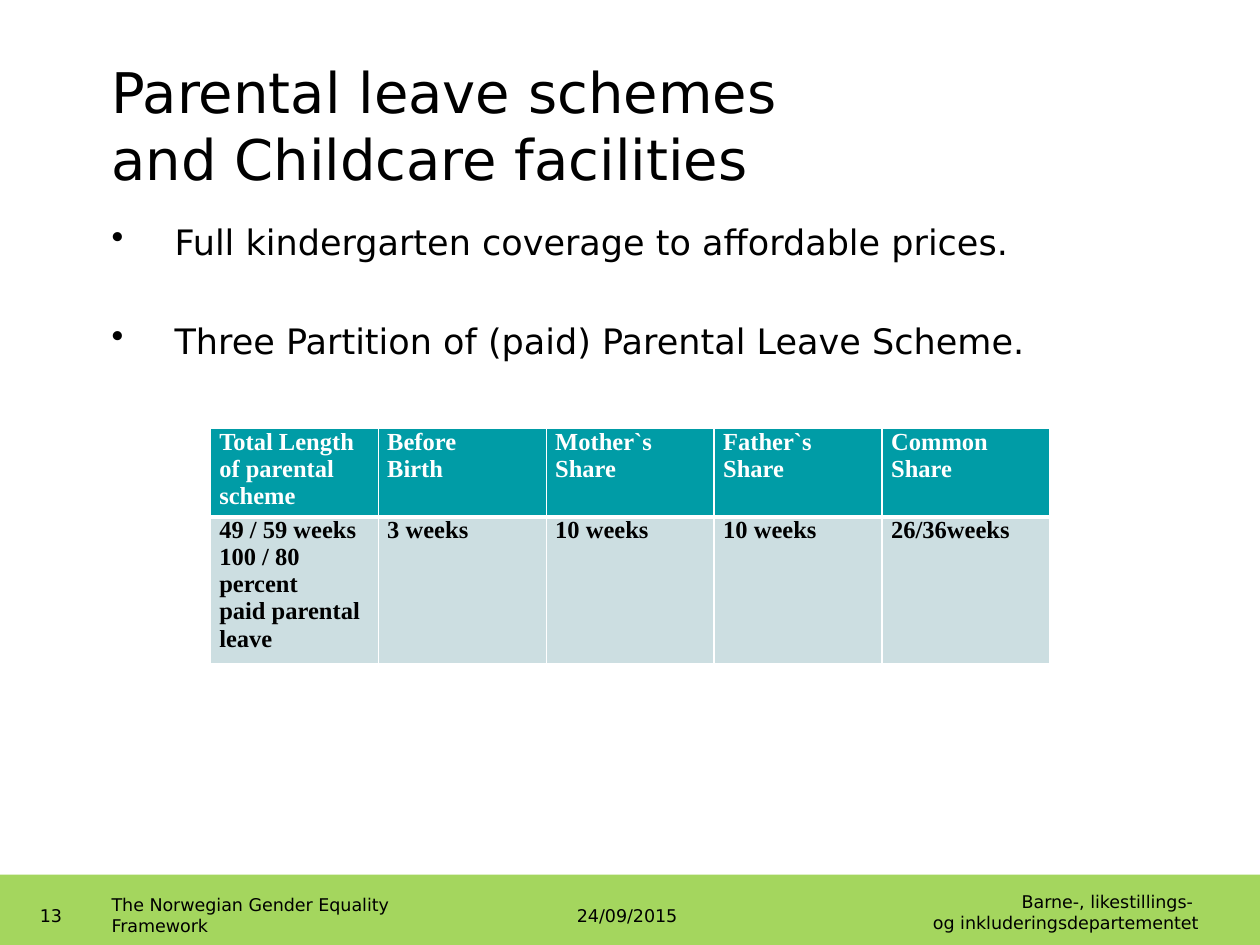
from lxml.etree import SubElement
from pptx import Presentation
from pptx.dml.color import RGBColor
from pptx.enum.shapes import MSO_SHAPE
from pptx.enum.text import MSO_ANCHOR, PP_ALIGN
from pptx.oxml.ns import qn
from pptx.util import Cm, Pt

SANS, SERIF = "DejaVu Sans", "Times New Roman"
BLACK, WHITE = "000000", "FFFFFF"
GREEN, TEAL, PALE_TEAL = "A4D65E", "009CA6", "CCDEE1"

BULLETS = [
    "Full kindergarten coverage to affordable prices.",
    "Three Partition of (paid) Parental Leave Scheme.",
]
LEAVE_SHARES = [
    ["Total Length of parental scheme", "Before\nBirth", "Mother`s\nShare",
     "Father`s\nShare", "Common\nShare"],
    ["49 / 59 weeks\n100 / 80 percent\npaid parental leave", "3 weeks",
     "10 weeks", "10 weeks", "26/36weeks"],
]


def color(hex_code):
    return RGBColor.from_string(hex_code)


def style(paragraph, size, font=SANS, hex_code=BLACK, bold=False):
    paragraph.font.size = Pt(size)
    paragraph.font.name = font
    paragraph.font.bold = bold
    paragraph.font.color.rgb = color(hex_code)


def add_text(slide, left, top, width, height, text, size,
             anchor=MSO_ANCHOR.MIDDLE, align=PP_ALIGN.LEFT):
    frame = slide.shapes.add_textbox(
        Cm(left), Cm(top), Cm(width), Cm(height)).text_frame
    frame.word_wrap = True
    frame.vertical_anchor = anchor
    frame.text = text
    for paragraph in frame.paragraphs:
        paragraph.alignment = align
        style(paragraph, size)
    return frame


def add_bullets(slide, left, top, width, height):
    frame = add_text(slide, left, top, width, height, "\n".join(BULLETS), 20,
                     anchor=MSO_ANCHOR.TOP)
    for index, paragraph in enumerate(frame.paragraphs):
        if index:
            paragraph.space_before = Pt(32.6)
        properties = paragraph._p.get_or_add_pPr()
        properties.set("marL", str(Cm(1.27)))
        properties.set("indent", str(-Cm(1.27)))
        bullet = properties.makeelement(qn("a:buChar"), {"char": "•"})
        properties.find(qn("a:defRPr")).addprevious(bullet)


def add_borders(cell, widths):
    """Draw white borders; widths are points for left, right, top, bottom."""
    properties = cell._tc.get_or_add_tcPr()
    for side, width in zip("LRTB", widths):
        line = SubElement(properties, qn(f"a:ln{side}"), w=str(Pt(width)))
        fill = SubElement(line, qn("a:solidFill"))
        SubElement(fill, qn("a:srgbClr"), val=WHITE)


def add_leave_table(slide, left, top, width, row_heights):
    column_count = len(LEAVE_SHARES[0])
    table = slide.shapes.add_table(
        len(LEAVE_SHARES), column_count, Cm(left), Cm(top),
        Cm(width), Cm(sum(row_heights))).table
    for column in table.columns:
        column.width = Cm(width / column_count)
    looks = [(TEAL, WHITE, (1, 1, 1, 3)), (PALE_TEAL, BLACK, (1, 1, 3, 1))]
    for row, height, texts, look in zip(table.rows, row_heights,
                                        LEAVE_SHARES, looks):
        row.height = Cm(height)
        fill, text_color, border_widths = look
        for cell, text in zip(row.cells, texts):
            add_borders(cell, border_widths)
            cell.fill.solid()
            cell.fill.fore_color.rgb = color(fill)
            cell.margin_left = cell.margin_right = Cm(0.18)
            cell.margin_top = cell.margin_bottom = 0
            cell.text = text
            for paragraph in cell.text_frame.paragraphs:
                style(paragraph, 14, SERIF, text_color, bold=True)


def add_footer(slide, left, top, width, height):
    band = slide.shapes.add_shape(
        MSO_SHAPE.RECTANGLE, Cm(left), Cm(top), Cm(width), Cm(height))
    band.shadow.inherit = False
    band.fill.solid()
    band.fill.fore_color.rgb = color(GREEN)
    band.line.fill.background()

    add_text(slide, left + 17.91, top + 0.2, 6.5, 1.12,
             "Barne-, likestillings- \v og inkluderingsdepartementet", 10,
             align=PP_ALIGN.RIGHT)
    entries = [
        (11.38, 5.92, "24/09/2015", PP_ALIGN.LEFT),
        (2, 8.05, "The Norwegian Gender Equality Framework", PP_ALIGN.LEFT),
        (0, 1.5, "13", PP_ALIGN.RIGHT),
    ]
    for offset, entry_width, text, align in entries:
        add_text(slide, left + offset, top + 0.33, entry_width, 0.99, text, 10,
                 align=align)


def main():
    presentation = Presentation()
    presentation.slide_width, presentation.slide_height = Cm(25.4), Cm(19.05)
    slide = presentation.slides.add_slide(presentation.slide_layouts[6])
    add_footer(slide, 0, 17.63, 25.4, 1.42)
    add_text(slide, 2, 0.81, 15.6, 3.18,
             "Parental leave schemes and Childcare facilities", 32,
             anchor=MSO_ANCHOR.BOTTOM)
    add_bullets(slide, 2, 4.32, 21.2, 12.57)
    add_leave_table(slide, 4.24, 8.64, 16.93, [1.64, 2.9])
    presentation.save("out.pptx")


if __name__ == "__main__":
    main()
